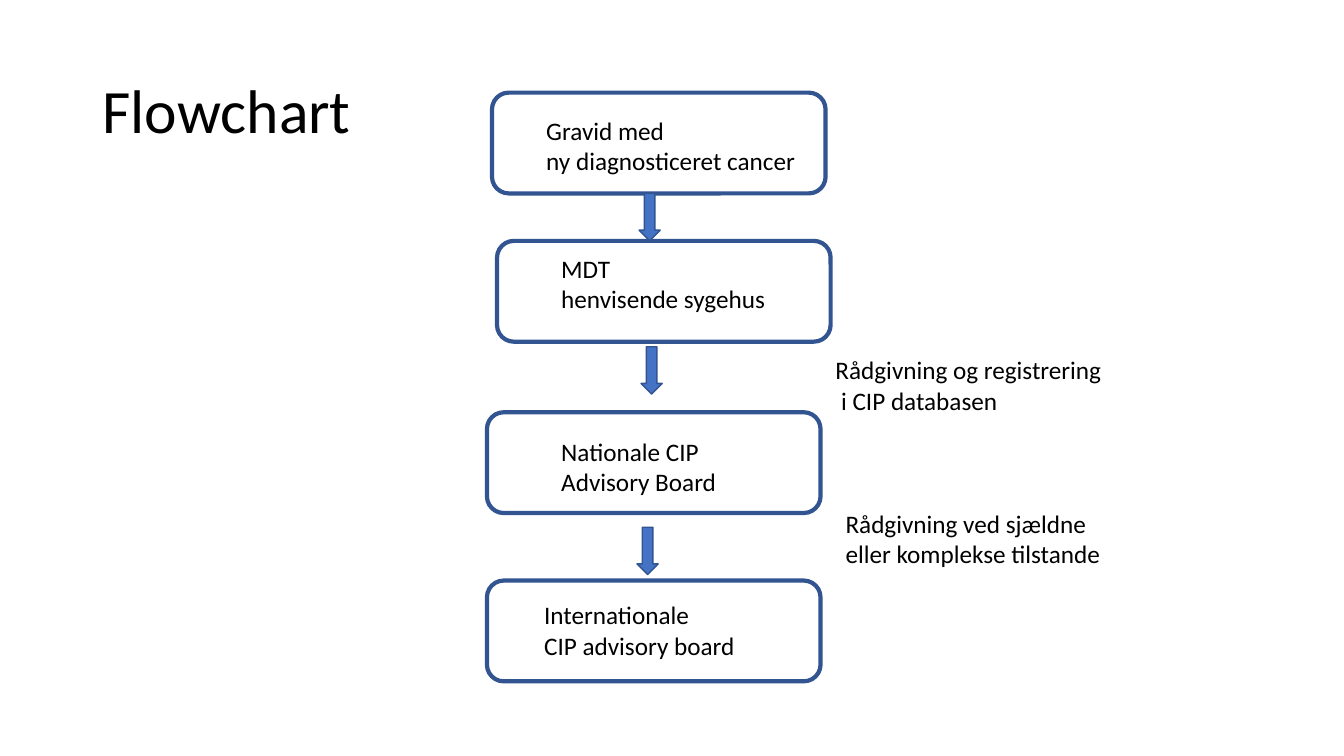
from pptx import Presentation
from pptx import util as u
from pptx.dml.color import RGBColor
from pptx.enum import shapes, text

FONT = "Calibri"
BLACK, BLUE, NAVY = "000000", "4472C4", "325491"
BOX_W, BOX_H = 238.3, 72
ARROW_W, ARROW_H = 15.1, 33.8
LABEL_H = 51


def rgb(value):
    """Turn a hex string into a colour."""
    return RGBColor.from_string(value)


def add_text(s, x, y, w, h, lines, size=18, wrap=False):
    """Place a text box with one paragraph per line."""
    sp = s.shapes.add_textbox(u.Pt(x), u.Pt(y), u.Pt(w), u.Pt(h))
    tf = sp.text_frame
    tf.word_wrap = wrap
    tf.text = "\n".join(lines)
    for p in tf.paragraphs:
        p.font.name = FONT
        p.font.size = u.Pt(size)
        p.font.color.rgb = rgb(BLACK)
    return tf


def add_outlined(s, kind, x, y, w, h, weight, fill=None):
    """Place a preset shape with a navy outline and an optional fill."""
    sp = s.shapes.add_shape(kind, u.Pt(x), u.Pt(y), u.Pt(w), u.Pt(h))
    sp.shadow.inherit = False
    if fill:
        sp.fill.solid()
        sp.fill.fore_color.rgb = rgb(fill)
    else:
        sp.fill.background()
    sp.line.color.rgb = rgb(NAVY)
    sp.line.width = u.Pt(weight)


def add_title(s, x, y, w, h, title):
    """Place the slide title, centred vertically in its box."""
    tf = add_text(s, x, y, w, h, [title], size=44, wrap=True)
    tf.vertical_anchor = text.MSO_ANCHOR.MIDDLE
    tf.paragraphs[0].line_spacing = 0.9


def add_step(s, x, y, dx, dy, w, lines):
    """Place a flowchart step with its label offset inside the box."""
    add_outlined(s, shapes.MSO_SHAPE.ROUNDED_RECTANGLE, x, y, BOX_W, BOX_H, 3)
    add_text(s, x + dx, y + dy, w, LABEL_H, lines)


def add_flowchart(s, x, y):
    """Place the steps, arrows and side notes relative to the top left corner."""
    steps = [
        (3.6, 0, 31.7, 12.3, 194.4, ["Gravid med", "ny diagnosticeret cancer"]),
        (7.2, 105.9, 38.8, 5, 162, ["MDT", "henvisende sygehus"]),
        (0, 228.3, 46, 13.7, 126, ["Nationale CIP", "Advisory Board"]),
        (0, 348.5, 33.8, 10.1, 151.9, ["Internationale", "CIP advisory board"]),
    ]
    for left, top, *label in steps:
        add_step(s, x + left, y + top, *label)

    for left, top in [(108.7, 72), (110.1, 181.5), (107.2, 310.4)]:
        add_outlined(s, shapes.MSO_SHAPE.DOWN_ARROW, x + left, y + top,
                     ARROW_W, ARROW_H, 1, BLUE)

    notes = [
        (241.9, 183.6, 206.6, ["Rådgivning og registrering", " i CIP databasen"]),
        (249.1, 293.1, 198.7, ["Rådgivning ved sjældne", "eller komplekse tilstande"]),
    ]
    for left, top, w, lines in notes:
        add_text(s, x + left, y + top, w, LABEL_H, lines)


def main():
    """Build the slide and save it."""
    prs = Presentation()
    prs.slide_width, prs.slide_height = u.Pt(960), u.Pt(540)
    s = prs.slides.add_slide(prs.slide_layouts[6])
    add_title(s, 66.2, 28.8, 828, 104.4, "Flowchart")
    add_flowchart(s, 347.8, 66.2)
    prs.save("out.pptx")


if __name__ == "__main__":
    main()
